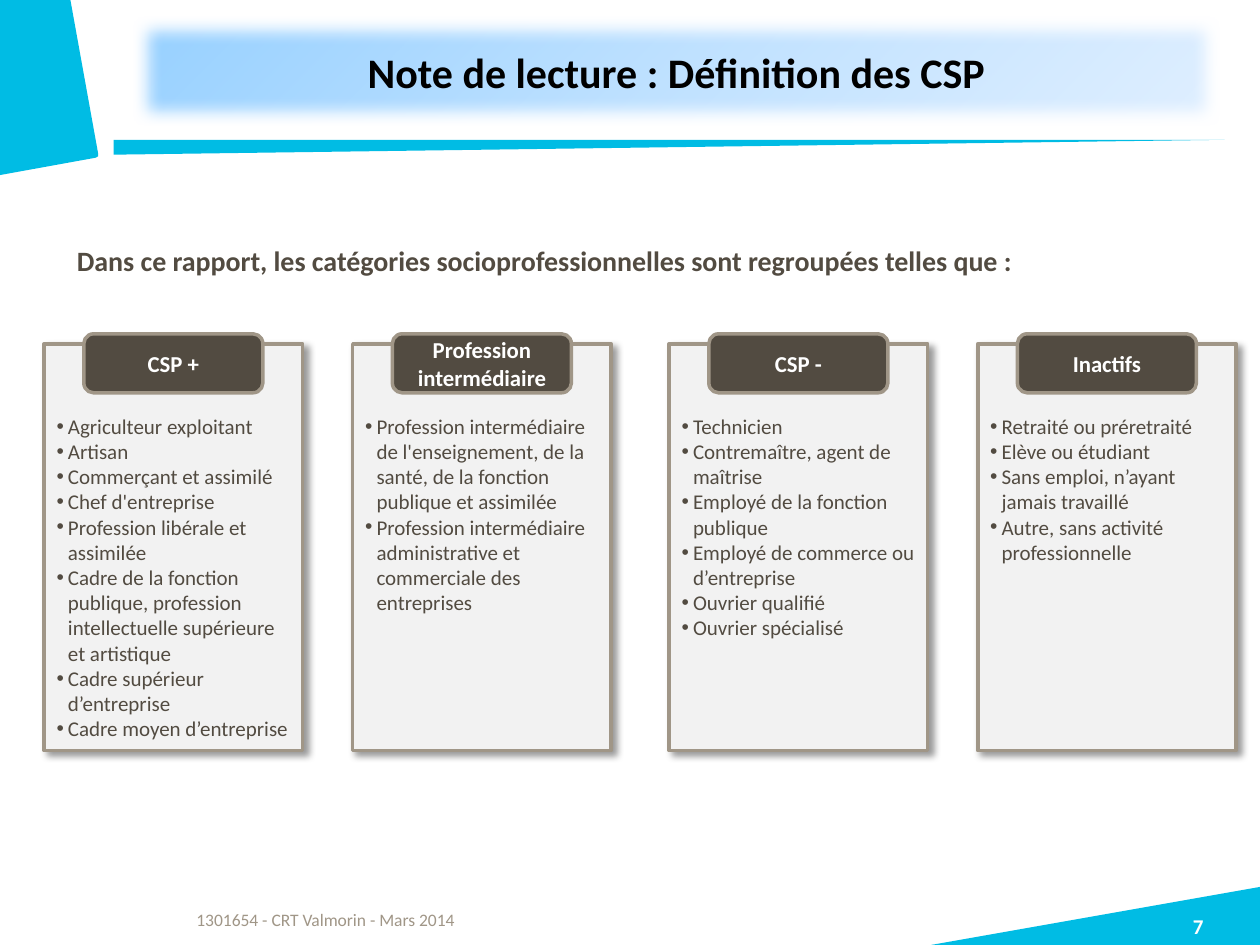
from lxml import etree
from pptx import Presentation
from pptx.dml.color import RGBColor
from pptx.enum.shapes import MSO_SHAPE
from pptx.enum.text import MSO_ANCHOR, MSO_AUTO_SIZE, PP_ALIGN
from pptx.oxml.ns import qn
from pptx.util import Cm, Pt

RECT, ROUND = MSO_SHAPE.RIGHT_TRIANGLE, MSO_SHAPE.ROUNDED_RECTANGLE
TOP, MID = MSO_ANCHOR.TOP, MSO_ANCHOR.MIDDLE
LEFT, CENTER = PP_ALIGN.LEFT, PP_ALIGN.CENTER
NS = "http://schemas.openxmlformats.org/drawingml/2006/main"

THEME = {
    "font": "Calibri",
    "cyan": "00BCE4", "dark": "524B41", "taupe": "A09687",
    "pale": "F2F2F2", "white": "FFFFFF", "black": "000000",
    "grad": ((0, "96D0FF"), (50, "BFE1FF"), (100, "E0EFFF")),
    "title": 24, "intro": 16, "head": 13, "list": 12, "page": 12, "foot": 10,
}

COLS = (
    (0.89, "CSP +", (
        "Agriculteur exploitant", "Artisan", "Commerçant et assimilé",
        "Chef d'entreprise", "Profession libérale et assimilée",
        "Cadre de la fonction publique, profession intellectuelle "
        "supérieure et artistique",
        "Cadre supérieur d’entreprise", "Cadre moyen d’entreprise")),
    (7.11, "Profession intermédiaire", (
        "Profession intermédiaire de l'enseignement, de la santé, "
        "de la fonction publique et assimilée",
        "Profession intermédiaire administrative et commerciale "
        "des entreprises")),
    (13.49, "CSP -", (
        "Technicien", "Contremaître, agent de maîtrise",
        "Employé de la fonction publique",
        "Employé de commerce ou d’entreprise",
        "Ouvrier qualifié", "Ouvrier spécialisé")),
    (19.71, "Inactifs", (
        "Retraité ou préretraité", "Elève ou étudiant",
        "Sans emploi, n’ayant jamais travaillé",
        "Autre, sans activité professionnelle")),
)


def paint(shape, fill, line=None):
    shape.fill.solid()
    shape.fill.fore_color.rgb = RGBColor.from_string(THEME[fill])
    if line:
        shape.line.color.rgb = RGBColor.from_string(THEME[line])
        shape.line.width = Pt(2)
    else:
        shape.line.fill.background()


def write(shape, lines, size, color, bold=False, align=LEFT, anchor=TOP,
          pads=(0.25, 0.13, 0.25, 0.13), bullet=False):
    """Fill a shape with one paragraph per line; pads are left, top, right, bottom."""
    frame = shape.text_frame
    sides = ("margin_left", "margin_top", "margin_right", "margin_bottom")
    form = dict(zip(sides, map(Cm, pads)), word_wrap=True,
                auto_size=MSO_AUTO_SIZE.NONE, vertical_anchor=anchor)
    for name, value in form.items():
        setattr(frame, name, value)
    frame.text = "\n".join(lines)
    for para in frame.paragraphs:
        if bullet:
            props = para._p.get_or_add_pPr()
            props.set("marL", str(Cm(0.23)))
            props.set("indent", str(-Cm(0.23)))
            etree.SubElement(props, qn("a:buFont")).set("typeface", "Arial")
            etree.SubElement(props, qn("a:buChar")).set("char", "•")
        para.alignment = align
        para.space_before = Pt(0)
        font = para.runs[0].font
        for name, value in {"name": THEME["font"], "size": Pt(THEME[size]),
                            "bold": bold}.items():
            setattr(font, name, value)
        font.color.rgb = RGBColor.from_string(THEME[color])


deck = Presentation()
deck.slide_width, deck.slide_height = Cm(25.4), Cm(19.05)
slide = deck.slides.add_slide(deck.slide_layouts[4])
shapes = slide.shapes
title, *bodies = slide.placeholders

# Cyan corners and rule
corners = (
    ((18.77, 19.05), (25.4, 17.88), (25.4, 19.05)),
    ((0, 3.53), (0, 0), (1.42, 0), (1.98, 3.1), (1.98, 3.15), (1.93, 3.18)),
)
for points in corners:
    first, *rest = [(Cm(x), Cm(y)) for x, y in points]
    path = shapes.build_freeform(*first)
    path.add_line_segments(rest)
    corner = path.convert_to_shape()
    corner.shadow.inherit = False
    paint(corner, "cyan")

rule = shapes.add_shape(RECT, Cm(2.29), Cm(2.82), Cm(22.4), Cm(0.3))
rule.shadow.inherit = False
paint(rule, "cyan")
rule.element.spPr.find(qn("a:xfrm")).set("flipV", "1")

# Title with gradient and soft edge
title.left, title.top, title.width, title.height = map(Cm, (2.69, 0.33, 21.89, 2.21))
write(title, ["Note de lecture : Définition des CSP"], "title", "black",
      True, CENTER, MID, (0, 0, 0, 0))
stops = "".join(f'<a:gs pos="{pos * 1000}"><a:srgbClr val="{color}"/></a:gs>'
                for pos, color in THEME["grad"])
for xml in (
    f'<a:gradFill xmlns:a="{NS}"><a:gsLst>{stops}</a:gsLst>'
    '<a:lin ang="2700000" scaled="0"/></a:gradFill>',
    f'<a:effectLst xmlns:a="{NS}"><a:softEdge rad="{Cm(0.32)}"/></a:effectLst>',
):
    title.element.spPr.append(etree.fromstring(xml))

# Plain texts
notes = (
    ((3.71, 18.19, 17.2, 0.86), "1301654 - CRT Valmorin - Mars 2014",
     {"size": "foot", "color": "taupe"}),
    ((22.91, 18.42, 2.49, 0.63), "7",
     {"size": "page", "color": "white", "bold": True, "align": CENTER,
      "pads": (0, 0, 0, 0)}),
    ((1.3, 4.78, 22.81, 0.94),
     "Dans ce rapport, les catégories socioprofessionnelles sont "
     "regroupées telles que :",
     {"size": "intro", "color": "dark", "bold": True}),
)
for area, text, form in notes:
    write(shapes.add_textbox(*map(Cm, area)), [text], **form)

# Category columns
shadow = (f'<a:effectLst xmlns:a="{NS}"><a:outerShdw blurRad="{Pt(4)}" '
          f'dist="{Pt(3)}" dir="2700000" algn="tl" rotWithShape="0">'
          f'<a:srgbClr val="{THEME["black"]}"><a:alpha val="40000"/></a:srgbClr>'
          '</a:outerShdw></a:effectLst>')
wide, tab = 5.21, 3.61
for body, (left, name, items) in zip(bodies, COLS):
    body.left, body.top, body.width, body.height = map(Cm, (left, 6.93, wide, 8.2))
    paint(body, "pale", "taupe")
    body.element.spPr.append(etree.fromstring(shadow))
    write(body, items, "list", "dark", pads=(0.25, 1.4, 0.25, 0.13), bullet=True)

    head = shapes.add_shape(ROUND, Cm(left + (wide - tab) / 2), Cm(6.73),
                            Cm(tab), Cm(1.19))
    head.shadow.inherit = False
    paint(head, "dark", "taupe")
    write(head, [name], "head", "white", True, CENTER, MID)

deck.save("out.pptx")
